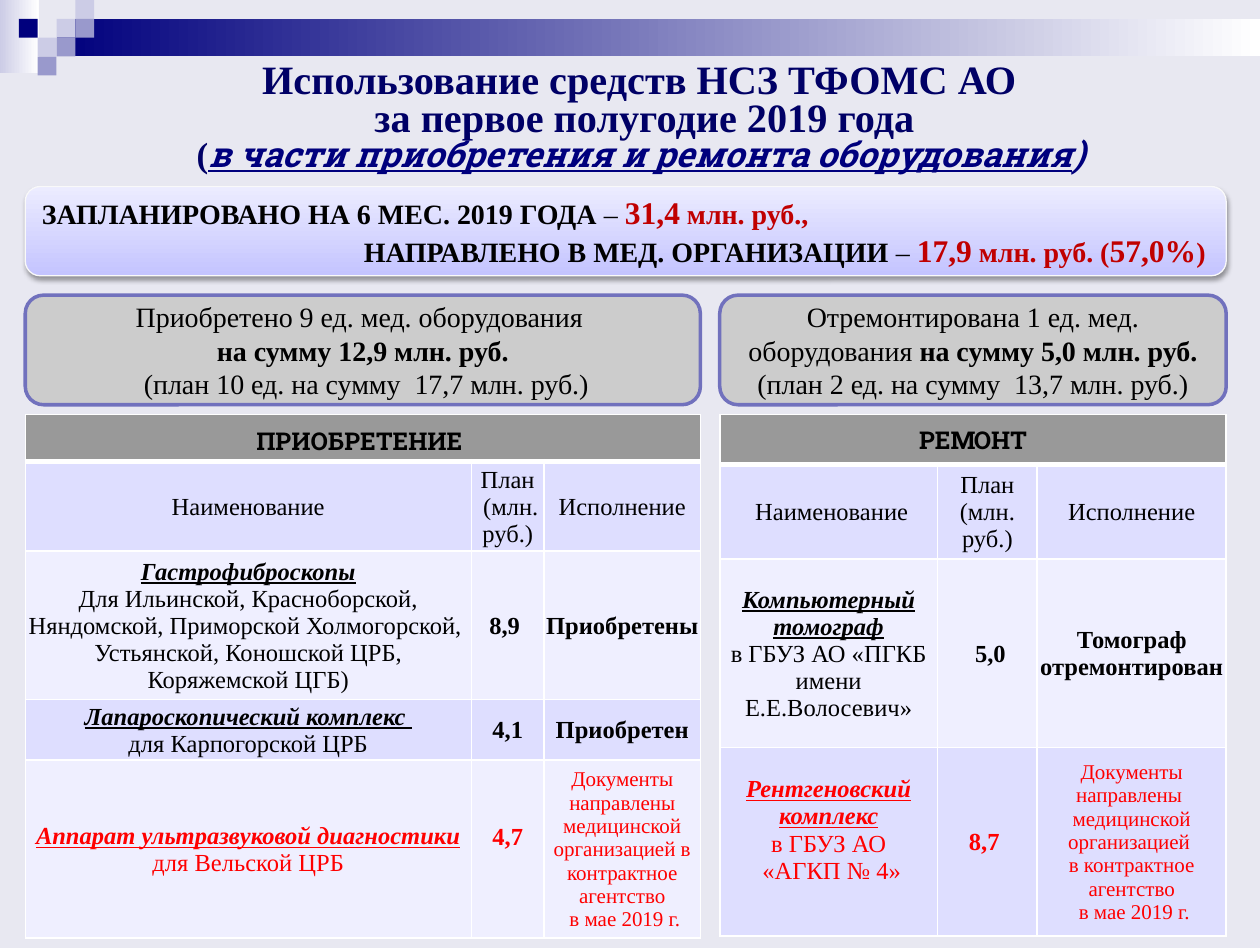
"""Build the slide on the use of insurance reserve funds for medical equipment."""
from lxml.etree import SubElement
from pptx import Presentation
from pptx.dml.color import RGBColor
from pptx.enum.shapes import MSO_SHAPE
from pptx.enum.text import MSO_ANCHOR, PP_ALIGN
from pptx.oxml import parse_xml
from pptx.oxml.ns import nsdecls, qn
from pptx.util import Cm, Pt

SERIF, SLAB = "Times New Roman", "Roboto Slab"
THEME = {
    "background": "E8E8F1", "navy": "00007D", "mid": "9999CC", "light": "CCCCE6",
    "white": "FFFFFF", "plan": ("C4C4FF", "ECECFF"), "plan line": "F9F9F9",
    "card": "CCCCCC", "card line": "7171BD", "header": "999999",
    "bands": ("DEDEFF", "EFEFFF"),
    "text": {
        "title": (SERIF, 23, "000066", "b"),
        "bracket": (SERIF, 20, "000066", "b"),
        "subtitle": (SLAB, 20, "00007D", "biu"),
        "subtitle end": (SLAB, 20, "00007D", "bi"),
        "label": (SERIF, 16, "000000", "b"),
        "plain": (SERIF, 16, "000000", ""),
        "amount": (SERIF, 18, "C00000", "b"),
        "unit": (SERIF, 16, "C00000", "b"),
        "header": (SLAB, 14, "000000", "b"),
        "header end": (SLAB, 16, "000000", "b"),
        "cell": (SERIF, 14, "000000", ""),
        "cell bold": (SERIF, 14, "000000", "b"),
        "cell name": (SERIF, 14, "000000", "biu"),
        "alert": (SERIF, 14, "FF0000", ""),
        "alert bold": (SERIF, 14, "FF0000", "b"),
        "alert name": (SERIF, 14, "FF0000", "biu"),
        "alert note": (SERIF, 12, "FF0000", ""),
    },
}

TITLE = [("Использование средств НСЗ ТФОМС АО \nза первое полугодие 2019 года\n", "title"),
         ("(", "bracket"), ("в части приобретения и ремонта оборудования", "subtitle"),
         (") ", "subtitle end")]
PLAN = [
    [("ЗАПЛАНИРОВАНО НА 6 МЕС. 2019 ГОДА", "label"), (" – ", "plain"),
     ("31,4", "amount"), (" млн. руб.,", "unit")],
    [("НАПРАВЛЕНО В МЕД. ОРГАНИЗАЦИИ", "label"), (" – ", "plain"), ("17,9", "amount"),
     (" млн. руб. (", "unit"), ("57,0%", "amount"), (")", "unit")],
]
SECTIONS = [
    {
        "card": [("Приобретено 9 ед. мед. оборудования \n", "plain"),
                 ("на сумму 12,9 млн. руб.\n ", "label"),
                 ("(план 10 ед. на сумму  17,7 млн. руб.)", "plain")],
        "header": [("ПРИОБРЕТЕНИЕ", "header"), (" ", "header end")],
        "columns": [8.99, 1.47, 3.15],
        "heights": [0.89, 1.72, 2.85, 1.14, 3.41],
        "rows": [
            [[("Наименование", "cell")], [("План", "cell"), (" (млн. руб.)", "cell")],
             [("Исполнение", "cell")]],
            [[("Гастрофиброскопы", "cell name"),
              ("Для Ильинской, Красноборской, Няндомской, Приморской Холмогорской,  "
               "Устьянской, Коношской ЦРБ, Коряжемской ЦГБ)", "cell")],
             [("8,9 ", "cell bold")], [("Приобретены", "cell bold")]],
            [[("Лапароскопический комплекс ", "cell name"), ("для Карпогорской ЦРБ", "cell")],
             [("4,1", "cell bold")], [("Приобретен", "cell bold")]],
            [[("Аппарат ультразвуковой диагностики", "alert name"),
              ("для Вельской ЦРБ", "alert")],
             [("4,7", "alert bold")],
             [("Документы направлены медицинской организацией в контрактное агентство",
               "alert note"), (" в мае 2019 г.", "alert note")]],
        ],
        "raised": [(4, 1)],
    },
    {
        "card": [("Отремонтирована 1 ед. мед. оборудования ", "plain"),
                 ("на сумму 5,0 млн. руб. ", "label"),
                 ("(план 2 ед. на сумму  13,7 млн. руб.)", "plain")],
        "header": [("РЕМОНТ", "header")],
        "columns": [4.39, 2.01, 3.81],
        "heights": [1, 1.91, 3.8, 3.8],
        "rows": [
            [[(" Наименование", "cell")], [("План (млн. руб.)", "cell")],
             [("Исполнение", "cell")]],
            [[("Компьютерный томограф", "cell name"),
              ("в ГБУЗ АО «ПГКБ имени Е.Е.Волосевич»", "cell")],
             [(" 5,0", "cell bold")], [("Томограф отремонтирован", "cell bold")]],
            [[("Рентгеновский комплекс", "alert name"), ("в ГБУЗ АО\n «АГКП № 4»", "alert")],
             [("8,7 ", "alert bold")],
             [("Документы направлены  медицинской организацией \nв контрактное агентство",
               "alert note"), (" в мае 2019 г.", "alert note")]],
        ],
        "raised": [(3, 0)],
    },
]
SQUARES = [(3, 1, "light"), (4, 0, "light"), (4, 1, "mid"), (2, 2, "light"),
           (1, 1, "navy"), (3, 2, "mid"), (2, 3, "mid")]
UNIT, LEFT, GAP, WIDTH, TABLE_HEIGHT = 0.38, 0.51, 0.39, 24.21, 10.52


def color(value):
    return RGBColor.from_string(value)


def write(text_frame, paragraphs, alignments):
    text_frame.word_wrap = True
    for index, (pieces, alignment) in enumerate(zip(paragraphs, alignments)):
        paragraph = text_frame.add_paragraph() if index else text_frame.paragraphs[0]
        paragraph.alignment = alignment
        for text, style in pieces:
            name, size, ink, flags = THEME["text"][style]
            for number, line in enumerate(text.split("\n")):
                if number:
                    paragraph.add_line_break()
                if not line:
                    continue
                run = paragraph.add_run()
                run.text = line
                font = run.font
                font.name, font.size, font.color.rgb = name, Pt(size), color(ink)
                font.bold, font.italic, font.underline = (flag in flags for flag in "biu")


def add_box(slide, kind, left, top, width, height, fill, angle=0, line=None, weight=1):
    shape = slide.shapes.add_shape(kind, Cm(left), Cm(top), Cm(width), Cm(height))
    shape.shadow.inherit = False
    if isinstance(fill, tuple):
        shape.fill.gradient()
        shape.fill.gradient_angle = angle
        for stop, value in zip(shape.fill.gradient_stops, fill):
            stop.color.rgb = color(value)
    else:
        shape.fill.solid()
        shape.fill.fore_color.rgb = color(fill)
    if line:
        shape.line.color.rgb = color(line)
        shape.line.width = Pt(weight)
    else:
        shape.line.fill.background()
    shape.text_frame.vertical_anchor = MSO_ANCHOR.MIDDLE
    return shape


def add_soft_shadow(shape):
    effects = shape._element.spPr.find(qn("a:effectLst"))
    shadow = SubElement(effects, qn("a:outerShdw"), blurRad=str(Pt(3.1)), dist=str(Pt(1.6)),
                        dir="5400000", rotWithShape="0")
    ink = SubElement(shadow, qn("a:srgbClr"), val="000000")
    SubElement(ink, qn("a:alpha"), val="38000")


def style_cell(cell, fill, margins=(0.03, 0.03, 0), bottom_weight=1):
    side_margin, top_margin, bottom_margin = margins
    cell.vertical_anchor = MSO_ANCHOR.MIDDLE
    cell.margin_left = cell.margin_right = Cm(side_margin)
    cell.margin_top, cell.margin_bottom = Cm(top_margin), Cm(bottom_margin)
    cell.fill.solid()
    cell.fill.fore_color.rgb = color(fill)
    properties = cell._tc.get_or_add_tcPr()
    for index, side in enumerate("LRTB"):
        weight = Pt(bottom_weight if side == "B" else 1)
        properties.insert(index, parse_xml(
            f'<a:ln{side} {nsdecls("a")} w="{weight}"><a:solidFill>'
            f'<a:srgbClr val="{THEME["white"]}"/></a:solidFill></a:ln{side}>'))


def add_section_table(slide, section, left, top):
    columns, heights = section["columns"], section["heights"]
    frame = slide.shapes.add_table(len(heights), len(columns), Cm(left), Cm(top),
                                   Cm(sum(columns)), Cm(TABLE_HEIGHT))
    table = frame.table
    for column, width in zip(table.columns, columns):
        column.width = Cm(width)
    for row, height in zip(table.rows, heights):
        row.height = Cm(height)
    frame.height = Cm(TABLE_HEIGHT)
    for cell in table.rows[0].cells:
        style_cell(cell, THEME["header"], (0.25, 0.13, 0.13), 3)
    header = table.cell(0, 0)
    header.merge(table.cell(0, len(columns) - 1))
    write(header.text_frame, [section["header"]], [PP_ALIGN.CENTER])
    for row_index, row in enumerate(section["rows"], 1):
        for column_index, pieces in enumerate(row):
            cell = table.cell(row_index, column_index)
            style_cell(cell, THEME["bands"][(row_index - 1) % 2])
            write(cell.text_frame, [[piece] for piece in pieces],
                  [PP_ALIGN.CENTER] * len(pieces))
    for position in section["raised"]:
        table.cell(*position).margin_bottom = Cm(0.5)


def main():
    presentation = Presentation()
    presentation.slide_width, presentation.slide_height = Cm(25.4), Cm(19.11)
    slide = presentation.slides.add_slide(presentation.slide_layouts[6])
    slide.background.fill.solid()
    slide.background.fill.fore_color.rgb = color(THEME["background"])

    rectangle = MSO_SHAPE.RECTANGLE
    add_box(slide, rectangle, 0, 0, 0.78, 1.48, (THEME["light"], THEME["white"]))
    add_box(slide, rectangle, 3 * UNIT, UNIT, 25.4 - 3 * UNIT, 2 * UNIT,
            (THEME["navy"], THEME["white"]))
    for column, row, name in SQUARES:
        add_box(slide, rectangle, column * UNIT, row * UNIT, UNIT, UNIT, THEME[name])

    title = slide.shapes.add_textbox(Cm(1.3), Cm(1.15), Cm(23.4), Cm(2.4))
    write(title.text_frame, [TITLE], [PP_ALIGN.CENTER])
    title.text_frame.paragraphs[0].line_spacing = 0.8

    plan = add_box(slide, MSO_SHAPE.ROUNDED_RECTANGLE, LEFT, 3.76, WIDTH, 1.8,
                   THEME["plan"], 90, THEME["plan line"], 0.75)
    add_soft_shadow(plan)
    plan.text_frame.margin_right = Cm(0.33)
    write(plan.text_frame, PLAN, [PP_ALIGN.LEFT, PP_ALIGN.RIGHT])

    left = LEFT
    for section in SECTIONS:
        width = sum(section["columns"])
        card = add_box(slide, MSO_SHAPE.FLOWCHART_ALTERNATE_PROCESS, left, 5.95, width, 2.21,
                       THEME["card"], 0, THEME["card line"], 2)
        write(card.text_frame, [section["card"]], [PP_ALIGN.CENTER])
        add_section_table(slide, section, left, 8.36)
        left += width + GAP
    presentation.save("out.pptx")


if __name__ == "__main__":
    main()
